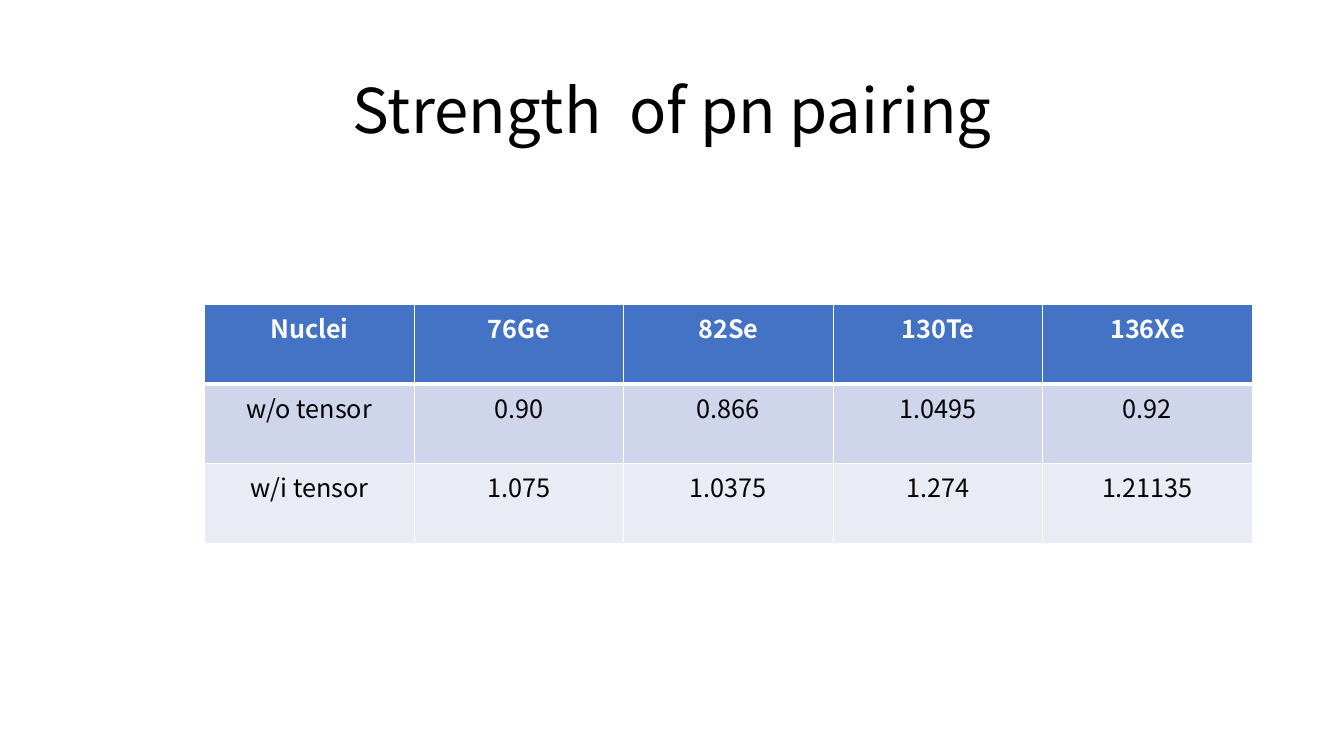
"""Build a slide with a table of proton-neutron pairing strengths."""
import pptx
import pptx.dml.color
import pptx.enum.text
import pptx.oxml.ns
import pptx.util
from lxml import etree

Inches = pptx.util.Inches
Pt = pptx.util.Pt

FONT = "Noto Sans CJK SC"
COLORS = {
    "text": "000000",
    "header_text": "FFFFFF",
    "border": "FFFFFF",
    "header": "4472C4",
    "odd_row": "CFD5EA",
    "even_row": "E9EBF5",
}
PAIRING_STRENGTHS = [
    ["Nuclei", "76Ge", "82Se", "130Te", "136Xe"],
    ["w/o tensor", "0.90", "0.866", "1.0495", "0.92"],
    ["w/i tensor", "1.075", "1.0375", "1.274", "1.21135"],
]
ROW_FILLS = ["header", "odd_row", "even_row"]


def rgb(name):
    """Return the named colour."""
    return pptx.dml.color.RGBColor.from_string(COLORS[name])


def add_text(text_frame, text, size, color, bold=False):
    """Write one centred run into the first paragraph and return the paragraph."""
    paragraph = text_frame.paragraphs[0]
    paragraph.alignment = pptx.enum.text.PP_ALIGN.CENTER
    run = paragraph.add_run()
    run.text = text
    run.font.name = FONT
    run.font.size = Pt(size)
    run.font.bold = bold
    run.font.color.rgb = rgb(color)
    return paragraph


def set_borders(cell, widths):
    """Draw the cell borders with the given widths in points by side."""
    qn = pptx.oxml.ns.qn
    properties = cell._tc.get_or_add_tcPr()
    for side, width in widths.items():
        line = etree.SubElement(properties, qn(f"a:ln{side}"), w=str(Pt(width)))
        fill = etree.SubElement(line, qn("a:solidFill"))
        etree.SubElement(fill, qn("a:srgbClr"), val=COLORS["border"])


def add_title(slide, text):
    """Place and fill the title placeholder."""
    title = slide.shapes.title
    title.left, title.top = Inches(0.92), Inches(0.4)
    title.width, title.height = Inches(11.5), Inches(1.45)
    title.text_frame.vertical_anchor = pptx.enum.text.MSO_ANCHOR.MIDDLE
    paragraph = add_text(title.text_frame, text, 44, "text")
    paragraph.line_spacing = 0.9


def add_strength_table(slide, rows):
    """Add the table with a header row and banded rows."""
    shape = slide.shapes.add_table(
        len(rows), len(rows[0]),
        Inches(2.03), Inches(3.02), Inches(10.39), Inches(2.37),
    )
    for row_index, values in enumerate(rows):
        is_header = row_index == 0
        widths = {"L": 1, "R": 1, "T": 3 if row_index == 1 else 1, "B": 3 if is_header else 1}
        for column_index, value in enumerate(values):
            cell = shape.table.cell(row_index, column_index)
            set_borders(cell, widths)
            cell.fill.solid()
            cell.fill.fore_color.rgb = rgb(ROW_FILLS[row_index])
            color = "header_text" if is_header else "text"
            add_text(cell.text_frame, value, 18, color, is_header)


def main():
    """Build and save the presentation."""
    presentation = pptx.Presentation()
    presentation.slide_width = Inches(13.33)
    presentation.slide_height = Inches(7.5)
    slide = presentation.slides.add_slide(presentation.slide_layouts[5])
    add_title(slide, "Strength  of pn pairing")
    add_strength_table(slide, PAIRING_STRENGTHS)
    presentation.save("out.pptx")


if __name__ == "__main__":
    main()
